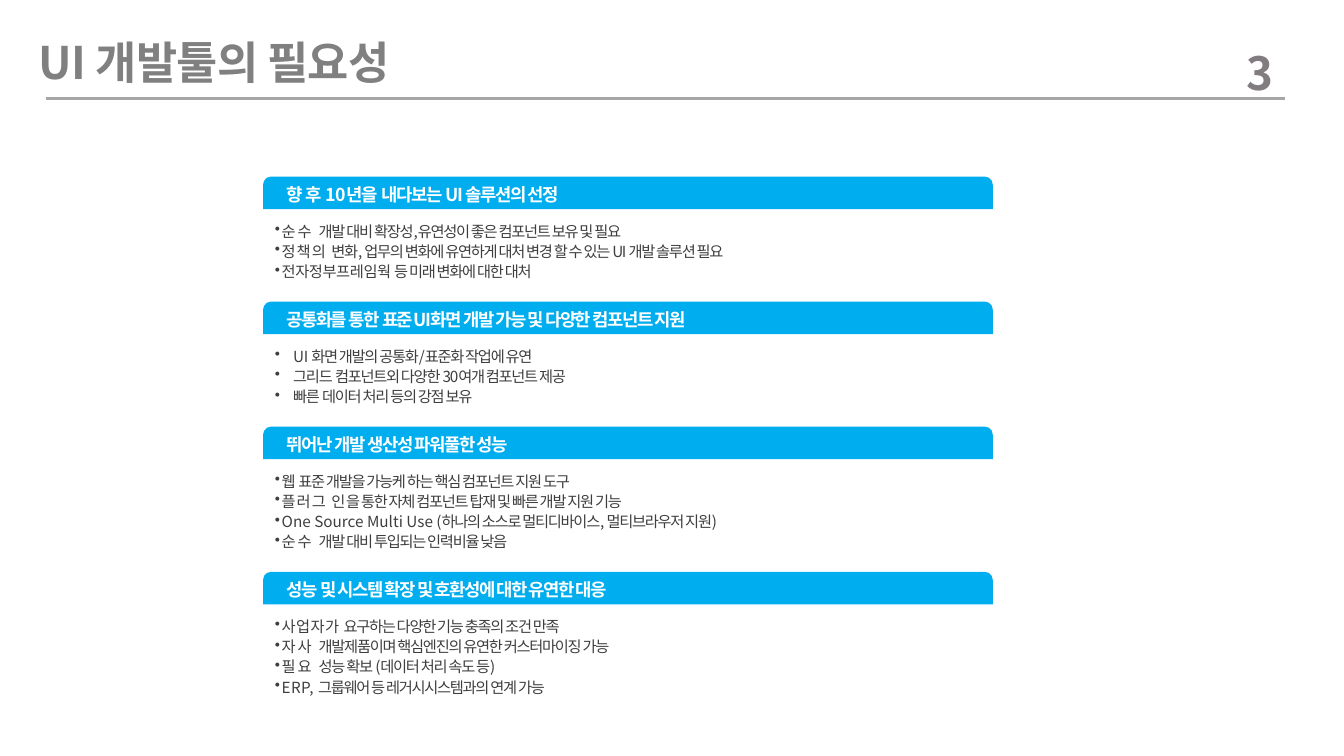
from lxml import etree
from pptx import Presentation, util as u
from pptx.dml.color import RGBColor
from pptx.enum import shapes, text
from pptx.oxml.ns import qn

FONT = "Noto Sans CJK KR"
BODY_SPACING = -0.93
HEADING_SPACING = -1.08
SECTIONS = [
    (("향 후 10년을 ", -0.4, "내다보는 UI 솔루션의 선정"), 0.17, [
        ("순수 ", 1.3, "개발 대비 확장성,유연성이 좋은 컴포넌트 보유 및 필요"),
        ("정책의 ", 0.7, "변화, 업무의 변화에 유연하게 대처 변경 할 수 있는 UI 개발 솔루션 필요"),
        ("전자정부프레임웍 ", -0.3, "등 미래 변화에 대한 대처"),
    ]),
    (("공통화를 통한 ", -1.1, "표준UI화면 개발 가능 및 다양한 컴포넌트 지원"), 0.46, [
        ("UI ", -0.3, "화면 개발의 공통화/표준화 작업에 유연"),
        ("그리드 ", -0.9, "컴포넌트외 다양한 30여개 컴포넌트 제공"),
        ("빠른 ", -0.9, "데이터 처리 등의 강점 보유"),
    ]),
    (("뛰어난 ", -1.1, "개발 생산성 파워풀한 성능"), 0.17, [
        ("웹 ", -0.6, "표준 개발을 가능케 하는 핵심 컴포넌트 지원 도구"),
        ("플러그 ", 0.7, "인 을 통한 자체 컴포넌트 탑재 및 빠른 개발 지원 기능"),
        ("One Source Multi Use ", 0, "(하나의 소스로 멀티디바이스, 멀티브라우저 지원)"),
        ("순수 ", 1.3, "개발 대비 투입되는 인력비율 낮음"),
    ]),
    (("성능 ", -1.1, "및 시스템 확장 및 호환성에 대한 유연한 대응"), 0.17, [
        ("사업자가 ", 0.3, "요구하는 다양한 기능 충족의 조건 만족"),
        ("자사 ", 1.3, "개발제품이며 핵심엔진의 유연한 커스터마이징 가능"),
        ("필요 ", 1.3, "성능 확보 (데이터 처리 속도 등)"),
        ("ERP, ", 0.3, "그룹웨어 등 레거시시스템과의 연계 가능"),
    ]),
]


def color(value):
    return RGBColor.from_string(value)


def style(paragraph, size, value, bold=False):
    font = paragraph.font
    font.name, font.size, font.bold = FONT, u.Pt(size), bold
    font.color.rgb = color(value)
    defaults = paragraph._p.pPr.find(qn("a:defRPr"))
    etree.SubElement(defaults, qn("a:ea")).set("typeface", FONT)


def add_spaced_run(paragraph, words, spacing):
    run = paragraph.add_run()
    run.text = words
    run._r.get_or_add_rPr().set("spc", str(round(spacing * 100)))


def prepare_frame(shape, anchor, left=0):
    frame = shape.text_frame
    frame.word_wrap = True
    frame.vertical_anchor = anchor
    frame.margin_left = u.Cm(left)
    frame.margin_top = frame.margin_right = frame.margin_bottom = 0
    return frame


def add_text_box(slide, left, top, width, height, anchor):
    box = slide.shapes.add_textbox(u.Cm(left), u.Cm(top), u.Cm(width), u.Cm(height))
    return prepare_frame(box, anchor)


def add_page_header(slide, left, top, width, height):
    rule = slide.shapes.add_connector(
        shapes.MSO_CONNECTOR.STRAIGHT, u.Cm(left + 0.18), u.Cm(top + height),
        u.Cm(left + width), u.Cm(top + height))
    rule.line.color.rgb = color("A6A6A6")
    rule.line.width = u.Pt(2.25)
    etree.SubElement(rule._element.spPr, qn("a:effectLst"))

    middle = text.MSO_ANCHOR.MIDDLE
    title = add_text_box(slide, left, top, 26.5, 1.38, middle).paragraphs[0]
    add_spaced_run(title, "UI 개발툴의 필요성", -0.5)
    style(title, 32, "808080", True)

    number = add_text_box(slide, left + width - 0.97, top + 0.25, 0.84, 1.4, middle).paragraphs[0]
    add_spaced_run(number, "3", 0)
    style(number, 32.6, "807C7F", True)


def add_bullet(paragraph, indent):
    properties = paragraph._p.get_or_add_pPr()
    properties.set("marL", str(u.Cm(indent)))
    properties.set("indent", str(-u.Cm(indent)))
    etree.SubElement(properties, qn("a:buChar")).set("char", "•")


def add_section(slide, left, top, width, section):
    (lead, spacing, rest), indent, items = section
    bar = slide.shapes.add_shape(
        shapes.MSO_SHAPE.ROUND_2_SAME_RECTANGLE, u.Cm(left), u.Cm(top), u.Cm(width), u.Cm(0.82))
    bar.adjustments[0] = 0.25
    bar.shadow.inherit = False
    bar.fill.solid()
    bar.fill.fore_color.rgb = color("00ADEE")
    bar.line.fill.background()
    heading = prepare_frame(bar, text.MSO_ANCHOR.MIDDLE, 0.53).paragraphs[0]
    heading.alignment = text.PP_ALIGN.LEFT
    add_spaced_run(heading, lead, spacing)
    add_spaced_run(heading, rest, HEADING_SPACING)
    style(heading, 12.7, "FFFFFF", True)

    frame = add_text_box(slide, left + 0.3, top + 1.14, width - 0.3,
                         0.51 * len(items), text.MSO_ANCHOR.TOP)
    for index, (lead, spacing, rest) in enumerate(items):
        paragraph = frame.add_paragraph() if index else frame.paragraphs[0]
        paragraph.line_spacing = u.Pt(13.1)
        if index:
            paragraph.space_before = u.Pt(1.4)
        add_bullet(paragraph, indent)
        add_spaced_run(paragraph, lead, spacing)
        add_spaced_run(paragraph, rest, BODY_SPACING)
        style(paragraph, 10.9, "3E3E3E")


def main():
    presentation = Presentation()
    presentation.slide_width, presentation.slide_height = u.Cm(33.87), u.Cm(19.05)
    slide = presentation.slides.add_slide(presentation.slide_layouts[6])
    add_page_header(slide, 0.97, 0.86, 31.42, 1.63)
    top = 4.45
    for section in SECTIONS:
        add_section(slide, 6.63, top, 18.39, section)
        top += 1.62 + 0.51 * len(section[2])
    presentation.save("out.pptx")


if __name__ == "__main__":
    main()
